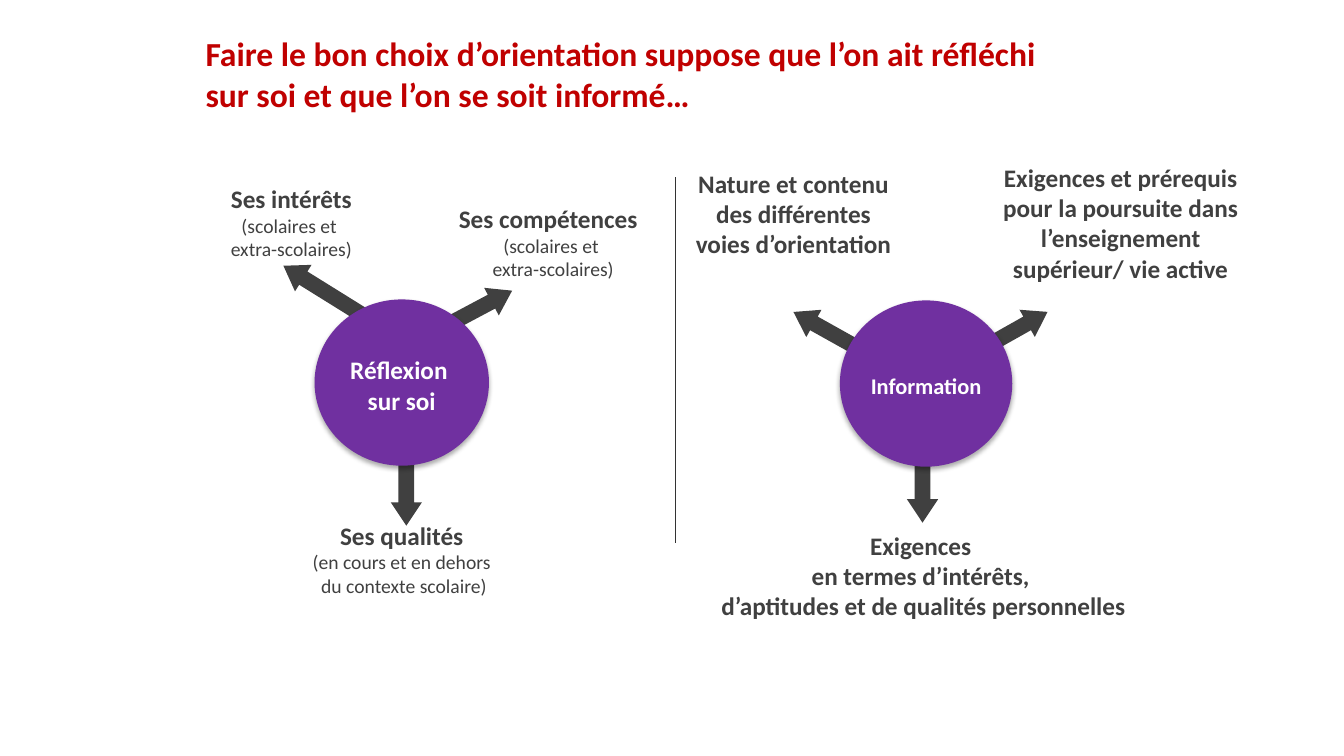
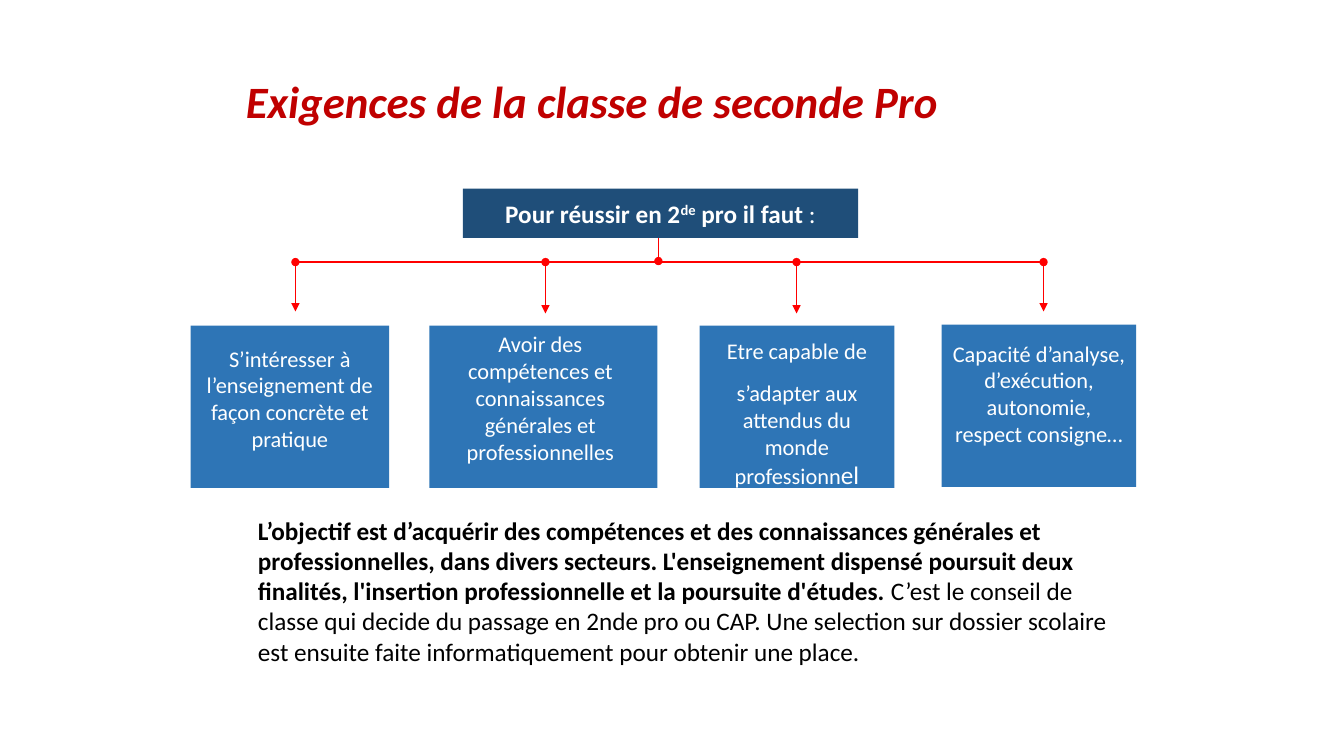
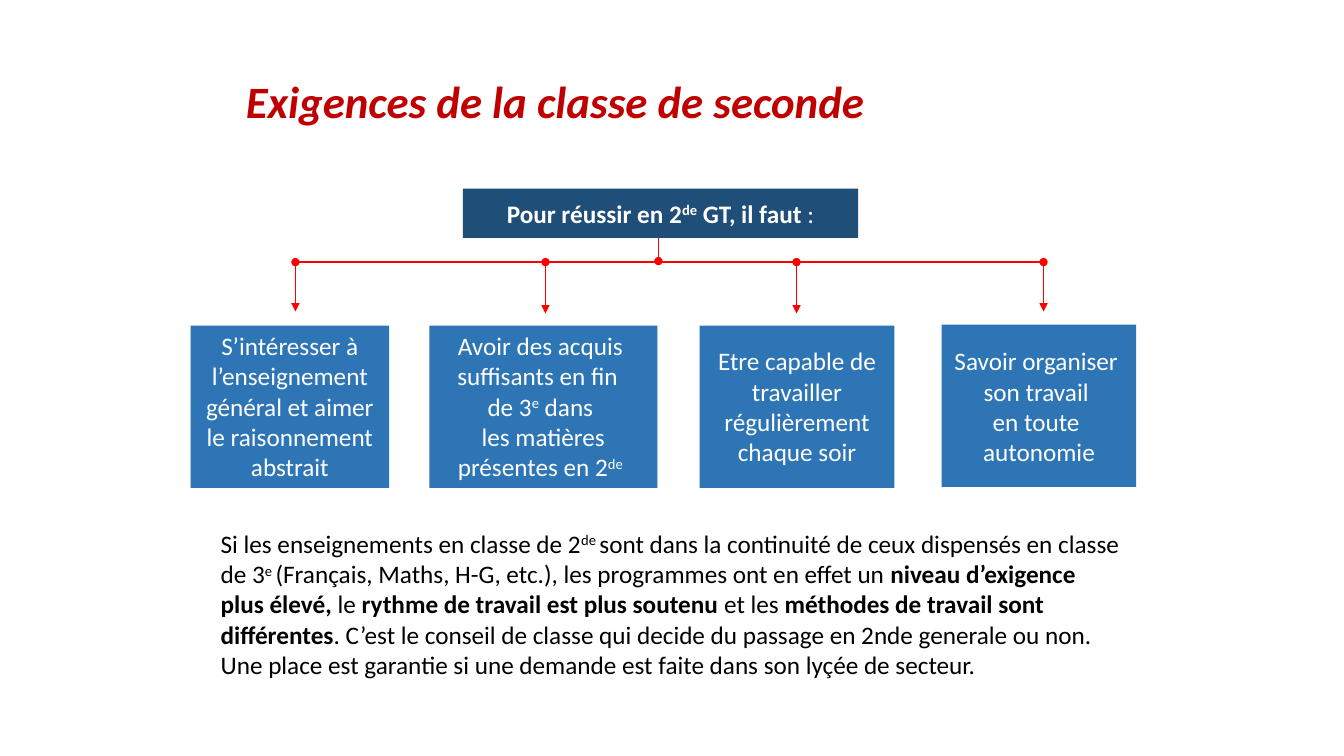
from copy import deepcopy

from lxml.etree import SubElement
from pptx import Presentation
from pptx.dml.color import RGBColor
from pptx.enum.shapes import MSO_CONNECTOR, MSO_SHAPE
from pptx.enum.text import MSO_ANCHOR, PP_ALIGN
from pptx.oxml.ns import qn
from pptx.util import Inches, Pt

# Shared look
COLORS = {
    "title": "C00000", "dark": "404040", "rule": "333333", "circle": "7030A0",
    "header": "1F4E79", "card": "2E75B6", "link": "FF0000",
    "white": "FFFFFF", "black": "000000",
}
FONT = "Calibri"

# Every length is in columns and rows of one square grid
WIDTH, HEIGHT = Inches(13.33), Inches(7.5)
COLS, ROWS = 133.3, 75
INSETS = (1, 0.5, 1, 0.5)

# Card columns: left, top, width, left inset, right inset, arrow x, arrow end
CARDS = [
    (18.9, 32.3, 19.7, 1, 1, 29.3, 30.9),
    (42.6, 32.3, 22.6, 0.8, 1.4, 54.1, 31.1),
    (69.4, 32.3, 19.3, 1.6, 1.6, 79, 31.1),
    (93.4, 32.2, 19.3, 1, 1, 103.5, 30.9),
]
CARD_ROWS = 16.1
BUS_ROW = 26


def col(n):
    return round(WIDTH * n / COLS)


def row(n):
    return round(HEIGHT * n / ROWS)


def place(x, y, w, h):
    return col(x), row(y), col(w), row(h)


def rgb(name):
    return RGBColor.from_string(COLORS[name])


# Text: a paragraph is a list of (text, size, style); style letters are
# b for bold, i for italic and ^ for superscript
def add_run(p, text, size, style, color):
    r = p.add_run()
    r.text = text
    r.font.name, r.font.size = FONT, Pt(size)
    r.font.bold, r.font.italic = "b" in style, "i" in style
    r.font.color.rgb = rgb(color)
    if "^" in style:
        r._r.get_or_add_rPr().set("baseline", "30000")
    return r


def write(sp, paragraphs, color, align=PP_ALIGN.CENTER, anchor=MSO_ANCHOR.TOP,
          insets=INSETS, wrap=True, before=0):
    tf = sp.text_frame
    tf.word_wrap, tf.vertical_anchor = wrap, anchor
    left, top, right, bottom = insets
    tf.margin_left, tf.margin_right = col(left), col(right)
    tf.margin_top, tf.margin_bottom = row(top), row(bottom)
    for i, runs in enumerate(paragraphs):
        p = tf.add_paragraph() if i else tf.paragraphs[0]
        p.alignment, p.space_before = align, Pt(before)
        for text, size, style in runs:
            for j, line in enumerate(text.split("\n")):
                if j:
                    # The break takes the size of the run it follows
                    p.add_line_break()
                    p._p[-1].append(deepcopy(r._r.rPr))
                if line:
                    r = add_run(p, line, size, style, color)


def add_text(s, box, runs, color="dark", align=PP_ALIGN.CENTER):
    write(s.shapes.add_textbox(*place(*box)), [runs], color, align)


def add_title(s, box, text, size, style):
    add_text(s, box, [(text, size, style)], "title", PP_ALIGN.LEFT)


# Shapes and lines
def add_shape(s, kind, box, fill):
    sp = s.shapes.add_shape(kind, *place(*box))
    sp.shadow.inherit = False
    sp.fill.solid()
    sp.fill.fore_color.rgb = rgb(fill)
    sp.line.fill.background()
    return sp


def add_arrow(s, box, angle):
    sp = add_shape(s, MSO_SHAPE.LEFT_ARROW, box, "dark")
    sp.adjustments[0], sp.adjustments[1] = 0.5, 0.75
    sp.rotation = angle


def add_circle(s, box, text, size):
    sp = add_shape(s, MSO_SHAPE.OVAL, box, "circle")
    effects = sp._element.spPr.find(qn("a:effectLst"))
    shadow = SubElement(effects, qn("a:outerShdw"), blurRad=str(Pt(3.5)),
                        dist=str(Pt(2.2)), dir="5400000", rotWithShape="0")
    color = SubElement(shadow, qn("a:srgbClr"), val=COLORS["black"])
    SubElement(color, qn("a:alpha"), val="32000")
    write(sp, [[(text, size, "b")]], "white", anchor=MSO_ANCHOR.MIDDLE,
          insets=(0, 0.5, 0, 0))


def add_line(s, start, end, color, width, head=None, tail=None):
    c = s.shapes.add_connector(MSO_CONNECTOR.STRAIGHT, col(start[0]), row(start[1]),
                               col(end[0]), row(end[1]))
    c.line.color.rgb = rgb(color)
    c.line.width = Pt(width)
    ln = c.line._get_or_add_ln()
    for tag, kind in (("a:headEnd", head), ("a:tailEnd", tail)):
        if kind:
            SubElement(ln, qn(tag), type=kind)
    SubElement(c._element.spPr, qn("a:effectLst"))


# Slide with the two circles
def build_choice(s):
    add_title(s, (19.4, 2.8, 86.6, 9.1),
              "Faire le bon choix d’orientation suppose que l’on ait réfléchi "
              "sur soi et que l’on se soit informé…", 24, "b")
    for x, y, w, angle in [
        (35.6, 45.9, 9.4, 270), (27.4, 27.3, 9.4, 31.9), (44.3, 28.9, 6.9, 152),
        (95.1, 31.7, 9.4, 150.6), (78.1, 31.7, 9.4, 29.2), (86.8, 45.6, 9.4, 270),
    ]:
        add_arrow(s, (x, y, w, 3.1), angle)
    add_line(s, (67, 17.6), (67, 53.9), "rule", 1)
    add_circle(s, (31.2, 29.7, 17.3, 16.5), "Réflexion \nsur soi", 18)
    add_circle(s, (83.3, 29.8, 17.1, 16.5), "Information", 16)

    for box, head, detail in [
        ((16.8, 17.7, 24.2, 8.8), "Ses intérêts\n", "(scolaires et \nextra-scolaires)"),
        ((42.7, 19.7, 23.9, 8.8), "Ses compétences \n", "(scolaires et\n extra-scolaires)"),
        ((21.1, 51.1, 37.5, 8.8), "Ses qualités\n",
         "(en cours et en dehors\n du contexte scolaire)"),
        ((67.4, 16.2, 22.6, 10.1),
         "Nature et contenu des différentes voies d’orientation", ""),
        ((97.5, 15.6, 27.3, 13.1),
         "Exigences et prérequis pour la poursuite dans l’enseignement "
         "supérieur/ vie active", ""),
        ((69.8, 52.1, 43.6, 10.1),
         "Exigences \nen termes d’intérêts, \nd’aptitudes et de qualités personnelles", ""),
    ]:
        add_text(s, box, [(head, 18, "b"), (detail, 14, "")])


# Slides with a header linked to four cards
def build_requirements(s, title, target, cards, summary_box, summary):
    add_title(s, (23.4, 6.8, 86.6, 6.4), title, 32, "bi")
    header = add_shape(s, MSO_SHAPE.RECTANGLE, (45.9, 18.7, 39.2, 4.9), "header")
    write(header, [[("Pour réussir en 2", 18, "b"), ("de", 18, "b^"),
                    (target, 18, "b"), (":", 18, "")]],
          "white", anchor=MSO_ANCHOR.MIDDLE, wrap=False)

    add_line(s, (65.3, 23.6), (65.3, 25.9), "link", 1.25, tail="oval")
    add_line(s, (CARDS[0][5], BUS_ROW), (CARDS[-1][5], BUS_ROW), "link", 1.25)
    for (x, y, w, left, right, arrow_x, arrow_end), (top, paragraphs) in zip(CARDS, cards):
        add_line(s, (arrow_x, BUS_ROW), (arrow_x, arrow_end), "link", 1.25,
                 head="oval", tail="triangle")
        card = add_shape(s, MSO_SHAPE.RECTANGLE, (x, y, w, CARD_ROWS), "card")
        write(card, paragraphs, "white", insets=(left, top, right, 0), before=11.2)

    add_text(s, summary_box, summary, "black", PP_ALIGN.LEFT)


# Each card: top inset, paragraphs
PRO_CARDS = [
    (1.9, [[("S’intéresser à l’enseignement de façon concrète et pratique", 16, "")]]),
    (0.5, [[("Avoir des compétences et connaissances générales et professionnelles",
             16, "")]]),
    (1.1, [[("Etre capable de", 16, "")],
           [("s’adapter aux attendus du monde professionn", 16, ""), ("el", 18, "")]]),
    (1.5, [[("Capacité d’analyse, d’exécution, autonomie, respect consigne…", 16, "")]]),
]
PRO_SUMMARY = [
    ("L’objectif est d’acquérir des compétences et des connaissances générales et "
     "professionnelles, dans divers secteurs. L'enseignement dispensé poursuit deux "
     "finalités, l'insertion professionnelle et la poursuite d'études. ", 18, "b"),
    ("C’est le conseil de classe qui decide du passage en 2nde pro ou CAP. Une "
     "selection sur dossier scolaire est ensuite faite informatiquement pour obtenir "
     "une place.", 18, ""),
]
GENERAL_CARDS = [
    (0.5, [[("S’intéresser à l’enseignement général et aimer le raisonnement abstrait",
             18, "")]]),
    (0.5, [[("Avoir des acquis suffisants en fin \nde 3", 18, ""), ("e", 18, "^"),
            (" dans\n les matières présentes en 2", 18, ""), ("de", 18, "^")]]),
    (2, [[("Etre capable de travailler régulièrement chaque soir", 18, "")]]),
    (2.1, [[("Savoir organiser \nson travail \nen toute \nautonomie", 18, "")]]),
]
GENERAL_SUMMARY = [
    ("Si les enseignements en classe de 2", 18, ""), ("de ", 18, "^"),
    ("sont dans la continuité de ceux dispensés en classe de 3", 18, ""),
    ("e ", 18, "^"),
    ("(Français, Maths, H-G, etc.), les programmes ont en effet un ", 18, ""),
    ("niveau d’exigence \nplus élevé, ", 18, "b"), ("le ", 18, ""),
    ("rythme de travail est plus soutenu", 18, "b"), (" et les ", 18, ""),
    ("méthodes de travail sont\ndifférentes", 18, "b"),
    (". C’est le conseil de classe qui decide du passage en 2nde generale ou non. "
     "Une place est garantie si une demande est faite dans son lyçée de secteur.", 18, ""),
]


def main():
    prs = Presentation()
    prs.slide_width, prs.slide_height = WIDTH, HEIGHT
    choice, pro, general = (prs.slides.add_slide(prs.slide_layouts[6]) for _ in range(3))
    build_choice(choice)
    build_requirements(pro, "Exigences de la classe de seconde Pro", " pro il faut ",
                       PRO_CARDS, (24.6, 50.6, 89.3, 16.2), PRO_SUMMARY)
    build_requirements(general, "Exigences de la classe de seconde", " GT, il faut ",
                       GENERAL_CARDS, (20.9, 51.9, 92.1, 16.2), GENERAL_SUMMARY)
    prs.save("out.pptx")


if __name__ == "__main__":
    main()
